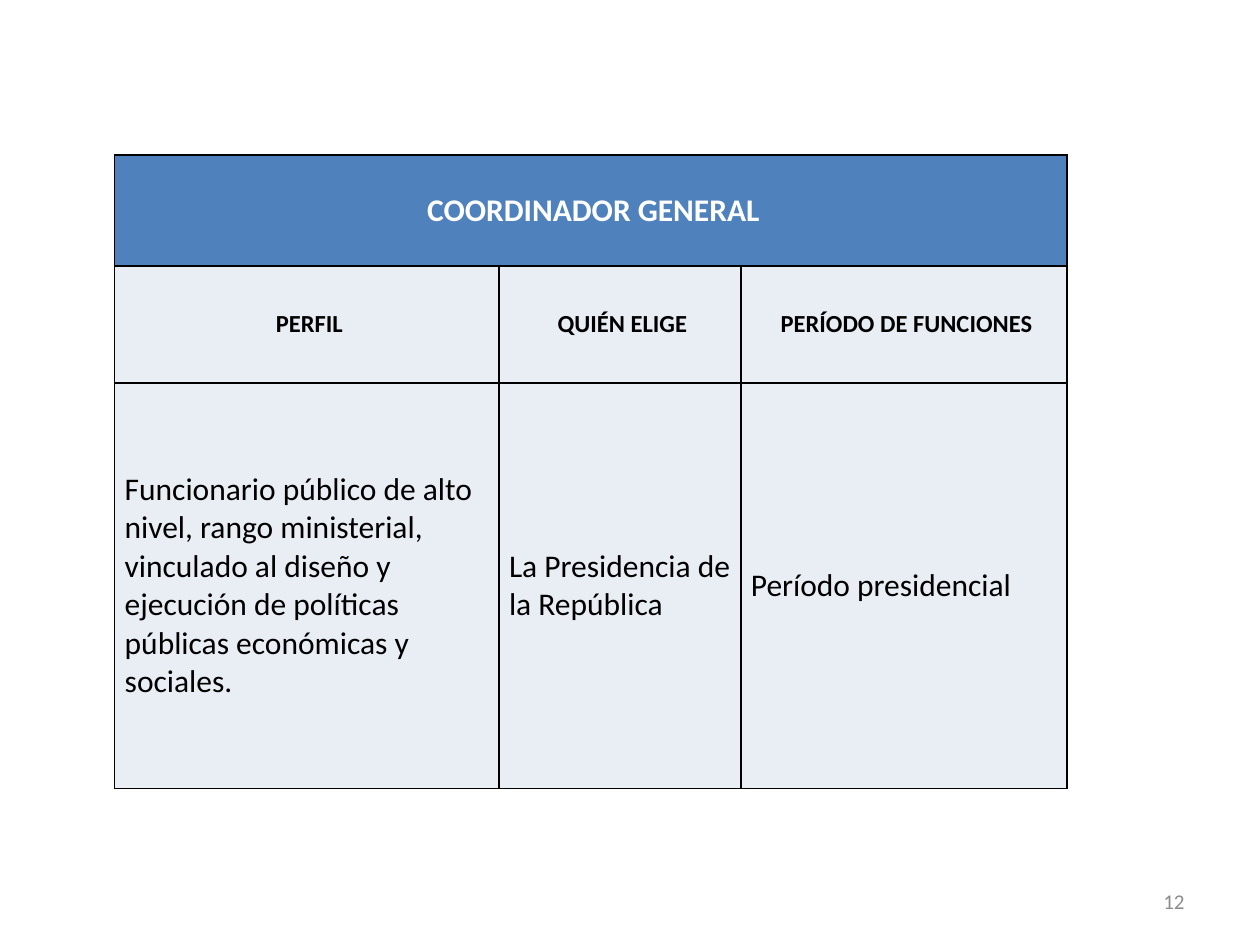
import pptx
import pptx.util
from lxml import etree
from pptx.dml.color import RGBColor
from pptx.enum.text import MSO_ANCHOR, PP_ALIGN
from pptx.oxml.ns import qn

COLORS = {"header": "4F81BD", "body": "E9EDF4", "border": "000000",
          "text": "000000", "header_text": "FFFFFF", "number": "8C8C8C"}
FONT = "Calibri"

ROWS = [
    ["COORDINADOR GENERAL", "", ""],
    ["PERFIL", "QUIÉN ELIGE", "PERÍODO DE FUNCIONES"],
    ["Funcionario público de alto nivel, rango ministerial, vinculado al diseño "
     "y ejecución de políticas públicas económicas y sociales.",
     "La Presidencia de la República",
     "Período presidencial"],
]
ROW_STYLES = [
    dict(fill="header", size=18, bold=True, color="header_text", align=PP_ALIGN.CENTER),
    dict(fill="body", size=14, bold=True, color="text", align=PP_ALIGN.CENTER),
    dict(fill="body", size=18, bold=False, color="text", align=PP_ALIGN.LEFT),
]
PAGE_NUMBER = "12"

SLIDE_W, SLIDE_H = 10, 7.5
TABLE_LEFT, TABLE_TOP = 0.91, 1.23
COLUMN_WIDTHS = [3.05, 1.92, 2.59]
ROW_HEIGHTS = [0.88, 0.93, 3.22]
CELL_INSET = 0.04


def inches(value):
    return pptx.util.Inches(value)


def write(frame, text, *, size, color, align, bold=False, indent=0):
    paragraph = frame.paragraphs[0]
    paragraph.alignment = align
    if indent:
        properties = paragraph._p.get_or_add_pPr()
        properties.set("marL", str(inches(indent)))
        properties.set("indent", "0")
    run = paragraph.add_run()
    run.text = text
    run.font.name = FONT
    run.font.size = pptx.util.Pt(size)
    run.font.bold = bold
    run.font.color.rgb = RGBColor.from_string(COLORS[color])


def add_borders(cell, color, width):
    properties = cell._tc.get_or_add_tcPr()
    for side in ("a:lnL", "a:lnR", "a:lnT", "a:lnB"):
        line = etree.SubElement(properties, qn(side), w=str(pptx.util.Pt(width)))
        fill = etree.SubElement(line, qn("a:solidFill"))
        etree.SubElement(fill, qn("a:srgbClr"), val=COLORS[color])


def add_profile_table(slide):
    table = slide.shapes.add_table(
        len(ROW_HEIGHTS), len(COLUMN_WIDTHS), inches(TABLE_LEFT), inches(TABLE_TOP),
        inches(sum(COLUMN_WIDTHS)), inches(sum(ROW_HEIGHTS))).table
    for column, width in zip(table.columns, COLUMN_WIDTHS):
        column.width = inches(width)
    for row, height in zip(table.rows, ROW_HEIGHTS):
        row.height = inches(height)
    table.cell(0, 0).merge(table.cell(0, len(COLUMN_WIDTHS) - 1))

    for row, texts, style in zip(table.rows, ROWS, ROW_STYLES):
        text_style = {key: value for key, value in style.items() if key != "fill"}
        for cell, text in zip(row.cells, texts):
            add_borders(cell, "border", 1)
            cell.fill.solid()
            cell.fill.fore_color.rgb = RGBColor.from_string(COLORS[style["fill"]])
            cell.vertical_anchor = MSO_ANCHOR.MIDDLE
            cell.margin_left = cell.margin_right = inches(CELL_INSET)
            cell.margin_top = cell.margin_bottom = inches(CELL_INSET)
            if text:
                write(cell.text_frame, text, indent=CELL_INSET, **text_style)


def add_page_number(slide):
    frame = slide.shapes.add_textbox(
        inches(7.17), inches(6.95), inches(2.33), inches(0.4)).text_frame
    frame.word_wrap = True
    frame.vertical_anchor = MSO_ANCHOR.MIDDLE
    write(frame, PAGE_NUMBER, size=12, color="number", align=PP_ALIGN.RIGHT)


def main():
    deck = pptx.Presentation()
    deck.slide_width, deck.slide_height = inches(SLIDE_W), inches(SLIDE_H)
    slide = deck.slides.add_slide(deck.slide_layouts[6])
    add_page_number(slide)
    add_profile_table(slide)
    deck.save("out.pptx")


if __name__ == "__main__":
    main()
